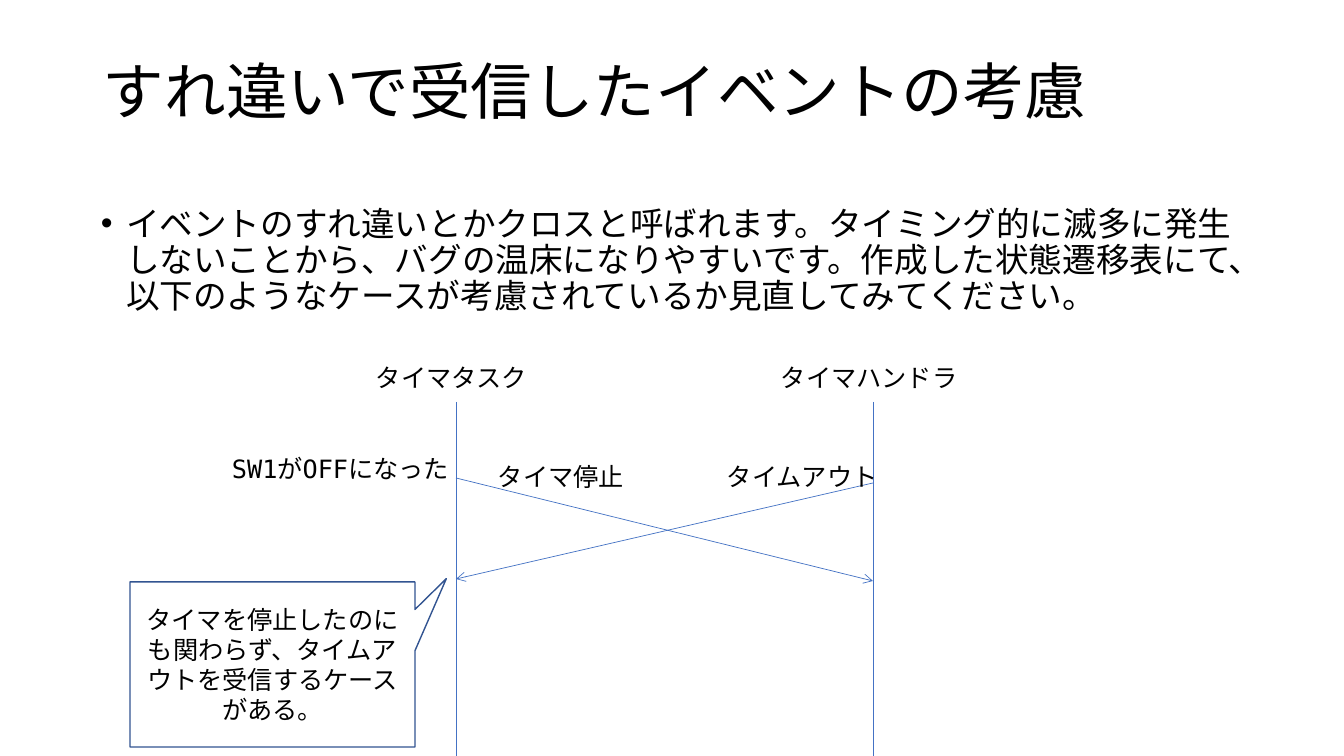
from lxml import etree
from pptx import Presentation
from pptx.dml.color import RGBColor
from pptx.enum.lang import MSO_LANGUAGE_ID
from pptx.enum.shapes import MSO_CONNECTOR, MSO_SHAPE
from pptx.enum.text import MSO_ANCHOR, PP_ALIGN
from pptx.oxml.ns import qn
from pptx.util import Pt

STRAIGHT = MSO_CONNECTOR.STRAIGHT
CALLOUT = MSO_SHAPE.RECTANGULAR_CALLOUT
TOP, MIDDLE = MSO_ANCHOR.TOP, MSO_ANCHOR.MIDDLE
LEFT, CENTER = PP_ALIGN.LEFT, PP_ALIGN.CENTER
JAPANESE = MSO_LANGUAGE_ID.JAPANESE

# Content, lengths in px
TITLE = ("すれ違いで受信したイベントの考慮", (93, 40, 1159, 110))
EXPLANATION = (
    "イベントのすれ違いとかクロスと呼ばれます。タイミング的に滅多に発生しないことから、"
    "バグの温床になりやすいです。作成した状態遷移表にて、"
    "以下のようなケースが考慮されているか見直してみてください。",
    (91, 202, 1159, 480),
)
TASK_X, HANDLER_X = 456, 873
LIFELINE_TOP, SLIDE_W, SLIDE_H = 402, 1344, 756
MESSAGES = [
    ((TASK_X, 478), (HANDLER_X, 581)),
    ((HANDLER_X, 483), (TASK_X, 579)),
]
LABEL_SIZE = (243, 40)
LABELS = [
    ("タイマタスク", 366, 357),
    ("タイマハンドラ", 771, 357),
    ("タイムアウト", 717, 456),
    ("タイマ停止", 488, 456),
    ("SW1がOFFになった", 222, 448),
]
CASE = ("タイマを停止したのにも関わらず、タイムアウトを受信するケースがある。",
        (130, 582, 285, 165))
CASE_POINTER = (0.61, -0.52)
COLORS = {"text": "000000", "line": "4472C4", "border": "325491", "paper": "FFFFFF"}
FONT = "DejaVu Sans Mono"
EMU_PER_PX = 914400 / 100.8


def px(*lengths):
    return [round(length * EMU_PER_PX) for length in lengths]


def color(key):
    return RGBColor.from_string(COLORS[key])


def write(shape, text, size, anchor=TOP, align=LEFT):
    frame = shape.text_frame
    frame.word_wrap = True
    frame.vertical_anchor = anchor
    frame.text = text
    paragraph = frame.paragraphs[0]
    paragraph.alignment = align
    font = paragraph.runs[0].font
    font.name, font.size, font.language_id = FONT, Pt(size), JAPANESE
    font.color.rgb = color("text")
    return paragraph


def add_text(box, text, size, anchor=TOP):
    return write(slide.shapes.add_textbox(*px(*box)), text, size, anchor)


def add_line(start, end, arrow=False):
    line = slide.shapes.add_connector(STRAIGHT, *px(*start, *end))
    line.line.color.rgb = color("line")
    line.line.width = Pt(0.5)
    properties = line._element.spPr
    etree.SubElement(properties, qn("a:effectLst"))
    if arrow:
        etree.SubElement(properties.find(qn("a:ln")), qn("a:tailEnd"), type="arrow")


prs = Presentation()
prs.slide_width, prs.slide_height = px(SLIDE_W, SLIDE_H)
slide = prs.slides.add_slide(prs.slide_layouts[6])

# Title and bulleted explanation
add_text(TITLE[1], TITLE[0], 44, MIDDLE).line_spacing = 0.9
bullet = add_text(EXPLANATION[1], EXPLANATION[0], 24)
bullet.line_spacing = 0.9
bullet.space_before = Pt(10)
indent = bullet._p.get_or_add_pPr()
indent.set("marL", "228600")
indent.set("indent", "-228600")
etree.SubElement(indent, qn("a:buFont"), typeface="Arial")
etree.SubElement(indent, qn("a:buChar"), char="•")

# Lifelines and crossing messages
for x in (TASK_X, HANDLER_X):
    add_line((x, LIFELINE_TOP), (x, SLIDE_H))
for start, end in MESSAGES:
    add_line(start, end, arrow=True)

# Labels
for text, x, y in LABELS:
    add_text((x, y, *LABEL_SIZE), text, 18)

# Callout for the overlooked case
case = slide.shapes.add_shape(CALLOUT, *px(*CASE[1]))
case.shadow.inherit = False
case.adjustments[0], case.adjustments[1] = CASE_POINTER
case.fill.solid()
case.fill.fore_color.rgb = color("paper")
case.line.color.rgb = color("border")
case.line.width = Pt(1)
write(case, CASE[0], 18, MIDDLE, CENTER)

prs.save("out.pptx")
